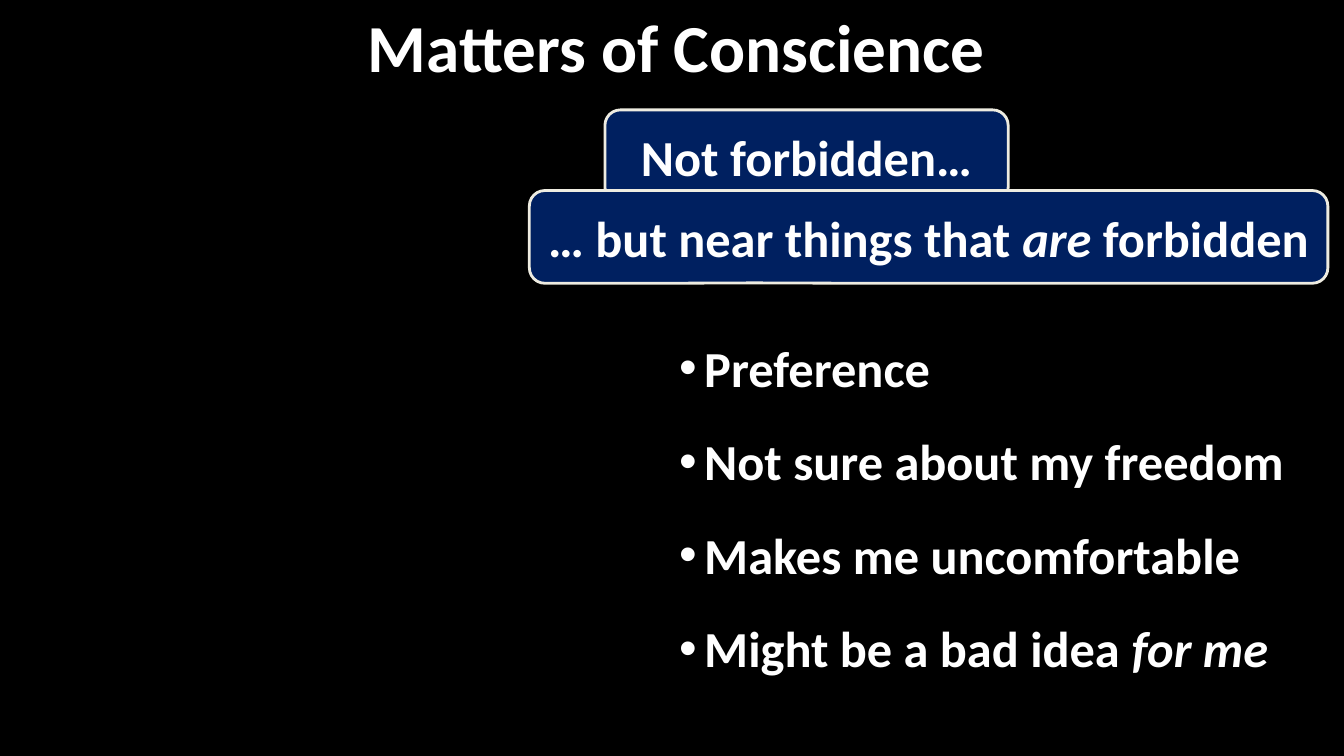
from lxml import etree
from pptx import Presentation
from pptx import util as u
from pptx.dml.color import RGBColor
from pptx.enum import shapes, text
from pptx.oxml.ns import qn

BLACK, WHITE, NAVY, CREAM = "000000", "FFFFFF", "002060", "EEECE1"
CALLOUT_ADJ = (-0.219, 0.496, 0.167)


def color(hex_code):
    return RGBColor.from_string(hex_code)


def add_callout(slide, box, fill=BLACK, line=BLACK, anchor=text.MSO_ANCHOR.MIDDLE):
    """Add a rounded callout and return its text frame."""
    sp = slide.shapes.add_shape(
        shapes.MSO_SHAPE.ROUNDED_RECTANGULAR_CALLOUT, *(u.Inches(v) for v in box))
    for i, value in enumerate(CALLOUT_ADJ):
        sp.adjustments[i] = value
    sp.shadow.inherit = False
    sp.fill.solid()
    sp.fill.fore_color.rgb = color(fill)
    sp.line.color.rgb = color(line)
    sp.line.width = u.Pt(2)
    tf = sp.text_frame
    tf.word_wrap = True
    tf.vertical_anchor = anchor
    return tf


def add_text(p, content, size=36, italic=False, align=text.PP_ALIGN.CENTER):
    p.alignment = align
    r = p.add_run()
    r.text = content
    r.font.name = "Calibri"
    r.font.size = u.Pt(size)
    r.font.bold = True
    r.font.italic = italic
    r.font.color.rgb = color(WHITE)


def set_bullet(p, indent=0.25):
    pPr = p._p.get_or_add_pPr()
    pPr.set("marL", str(u.Inches(indent)))
    pPr.set("indent", str(-u.Inches(indent)))
    etree.SubElement(pPr, qn("a:buFont")).set("typeface", "Arial")
    etree.SubElement(pPr, qn("a:buChar")).set("char", "•")


def add_title(slide, box):
    tf = add_callout(slide, box)
    add_text(tf.paragraphs[0], "Matters of Conscience", size=48)


def add_reasons(slide, box):
    tf = add_callout(slide, box, anchor=text.MSO_ANCHOR.TOP)
    reasons = [
        [("Preference", False)],
        [("Not sure about my freedom", False)],
        [("Makes me uncomfortable", False)],
        [("Might be a bad idea ", False), ("for me", True)],
    ]
    for i, parts in enumerate(reasons):
        p = tf.add_paragraph() if i else tf.paragraphs[0]
        if i:
            p.space_before = u.Pt(23.5)
        set_bullet(p)
        for content, italic in parts:
            add_text(p, content, italic=italic, align=text.PP_ALIGN.LEFT)


def add_banner(slide, box, parts):
    tf = add_callout(slide, box, fill=NAVY, line=CREAM)
    for content, italic in parts:
        add_text(tf.paragraphs[0], content, italic=italic)


def main():
    prs = Presentation()
    prs.slide_width, prs.slide_height = u.Inches(13.33), u.Inches(7.5)
    slide = prs.slides.add_slide(prs.slide_layouts[6])
    slide.background.fill.solid()
    slide.background.fill.fore_color.rgb = color(BLACK)

    # Title and list of reasons
    add_title(slide, (-0.08, 0, 13.58, 0.91))
    add_reasons(slide, (6.42, 3.08, 6.92, 4.42))

    # Overlapping banners
    add_banner(slide, (6, 1.09, 4, 0.92), [("Not forbidden…", False)])
    add_banner(slide, (5.25, 1.89, 7.92, 0.92), [
        ("… but near things that ", False), ("are", True), (" forbidden", False)])

    prs.save("out.pptx")


if __name__ == "__main__":
    main()
